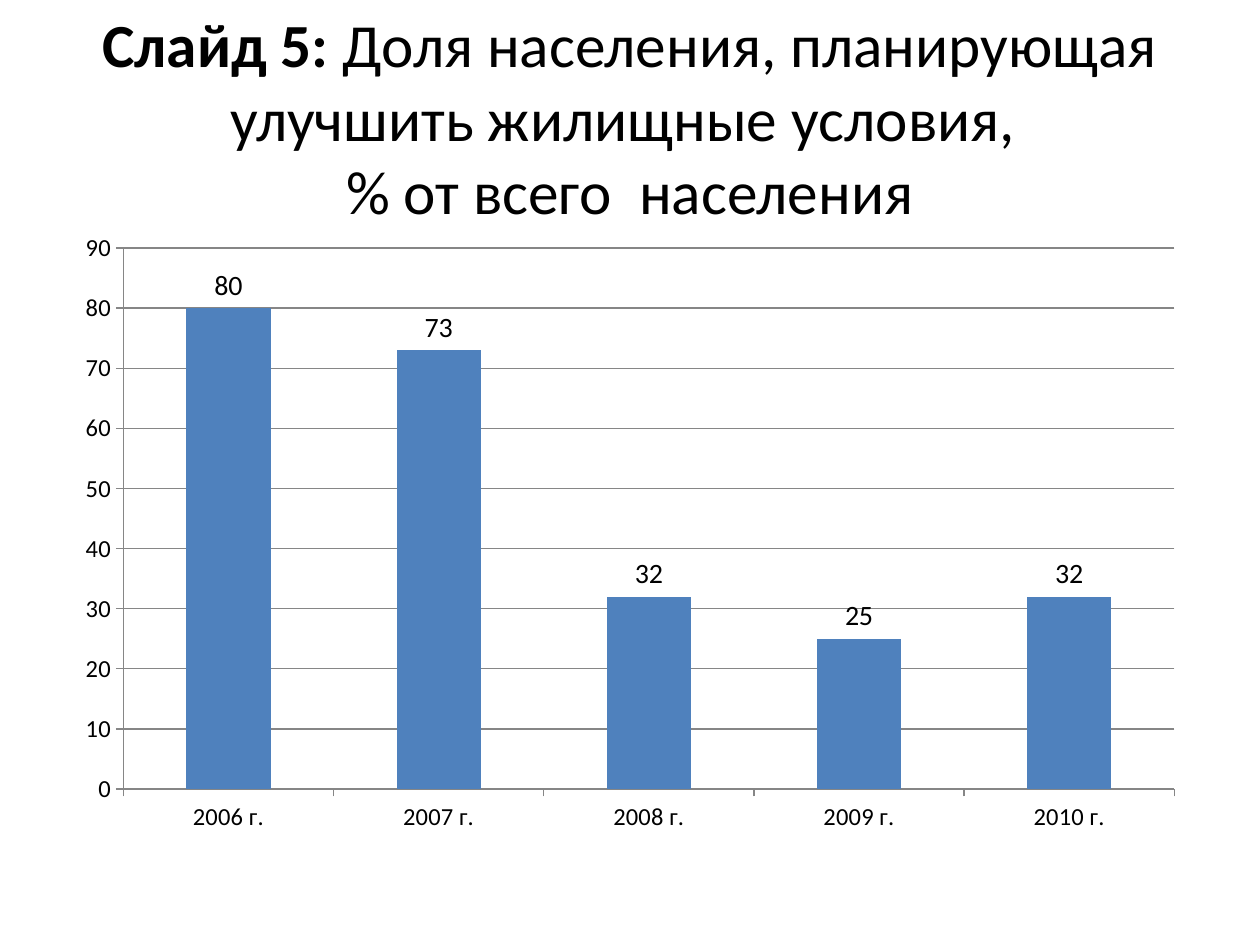
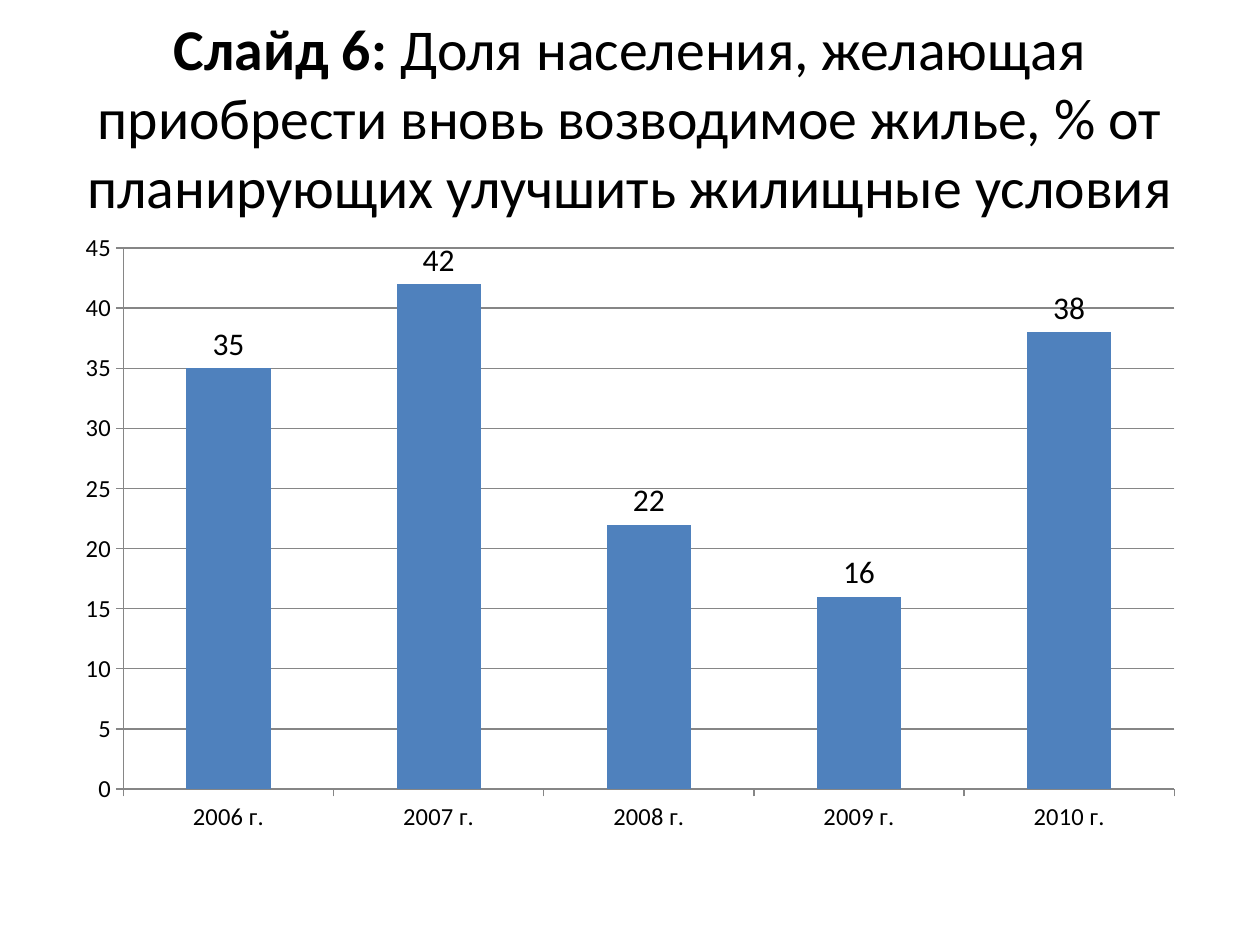
from pptx import Presentation
from pptx.chart.data import CategoryChartData
from pptx.dml.color import RGBColor
from pptx.enum.chart import XL_CHART_TYPE, XL_LABEL_POSITION, XL_TICK_MARK
from pptx.enum.text import MSO_ANCHOR, MSO_AUTO_SIZE, PP_ALIGN
from pptx.util import Inches, Pt

# Content
YEARS = ["2006 г.", "2007 г.", "2008 г.", "2009 г.", "2010 г."]
SURVEYS = [
    {
        "number": "Слайд 5: ",
        "question": "Доля населения, планирующая улучшить жилищные условия, \n"
                    "% от всего  населения",
        "title_size": 35,
        "shares": [80, 73, 32, 25, 32],
        "label_size": 16,
        "scale_max": 90,
        "scale_step": 10,
    },
    {
        "number": "Слайд 6: ",
        "question": "Доля населения, желающая приобрести вновь возводимое жилье, "
                    "% от планирующих улучшить жилищные условия",
        "title_size": 33,
        "shares": [35, 42, 22, 16, 38],
        "label_size": 18,
        "scale_max": 45,
        "scale_step": 5,
    },
]

# Shared style
FONT = "Calibri"
COLORS = {"text": "000000", "bar": "4F81BD", "line": "868686"}
AXIS_SIZE = 14
MARGIN, CONTENT_WIDTH = 0.5, 9
TITLE_TOP, TITLE_HEIGHT = 0.3, 1.25
CHART_TOP, CHART_HEIGHT = 1.75, 4.95


def color(name):
    return RGBColor.from_string(COLORS[name])


def style_font(font, size, bold=False):
    font.name = FONT
    font.size = Pt(size)
    font.bold = bold
    font.color.rgb = color("text")


def add_text(paragraph, text, **style):
    """Add text to the paragraph, with a line break at each newline."""
    for index, line in enumerate(text.split("\n")):
        if index:
            paragraph.add_line_break()
        run = paragraph.add_run()
        run.text = line
        style_font(run.font, **style)


def fill_title(title, survey):
    title.left, title.top = Inches(MARGIN), Inches(TITLE_TOP)
    title.width, title.height = Inches(CONTENT_WIDTH), Inches(TITLE_HEIGHT)
    frame = title.text_frame
    frame.word_wrap = True
    frame.auto_size = MSO_AUTO_SIZE.NONE
    frame.vertical_anchor = MSO_ANCHOR.MIDDLE
    heading = frame.paragraphs[0]
    heading.alignment = PP_ALIGN.CENTER
    add_text(heading, survey["number"], size=survey["title_size"], bold=True)
    add_text(heading, survey["question"], size=survey["title_size"])


def add_share_chart(slide, survey):
    data = CategoryChartData()
    data.categories = YEARS
    data.add_series("Series 1", survey["shares"])
    chart = slide.shapes.add_chart(
        XL_CHART_TYPE.COLUMN_CLUSTERED, Inches(MARGIN), Inches(CHART_TOP),
        Inches(CONTENT_WIDTH), Inches(CHART_HEIGHT), data).chart
    chart.has_title = False
    chart.has_legend = False
    style_font(chart.font, size=10)

    # Bars and their values
    plot = chart.plots[0]
    plot.gap_width = 150
    plot.vary_by_categories = False
    bars = plot.series[0].format.fill
    bars.solid()
    bars.fore_color.rgb = color("bar")
    plot.has_data_labels = True
    labels = plot.data_labels
    labels.show_value = True
    labels.position = XL_LABEL_POSITION.OUTSIDE_END
    style_font(labels.font, size=survey["label_size"])

    # Axes and gridlines
    year_axis, share_axis = chart.category_axis, chart.value_axis
    share_axis.minimum_scale = 0
    share_axis.maximum_scale = survey["scale_max"]
    share_axis.major_unit = survey["scale_step"]
    share_axis.has_major_gridlines = True
    for axis in (year_axis, share_axis):
        axis.major_tick_mark = XL_TICK_MARK.OUTSIDE
        axis.minor_tick_mark = XL_TICK_MARK.NONE
        style_font(axis.tick_labels.font, size=AXIS_SIZE)
    for lined in (year_axis, share_axis, share_axis.major_gridlines):
        lined.format.line.color.rgb = color("line")
        lined.format.line.width = Pt(0.75)


def main():
    deck = Presentation()
    deck.slide_width, deck.slide_height = Inches(10), Inches(7.5)
    title_only = deck.slide_layouts[5]
    for survey in SURVEYS:
        slide = deck.slides.add_slide(title_only)
        fill_title(slide.shapes.title, survey)
        add_share_chart(slide, survey)
    deck.save("out.pptx")


if __name__ == "__main__":
    main()
